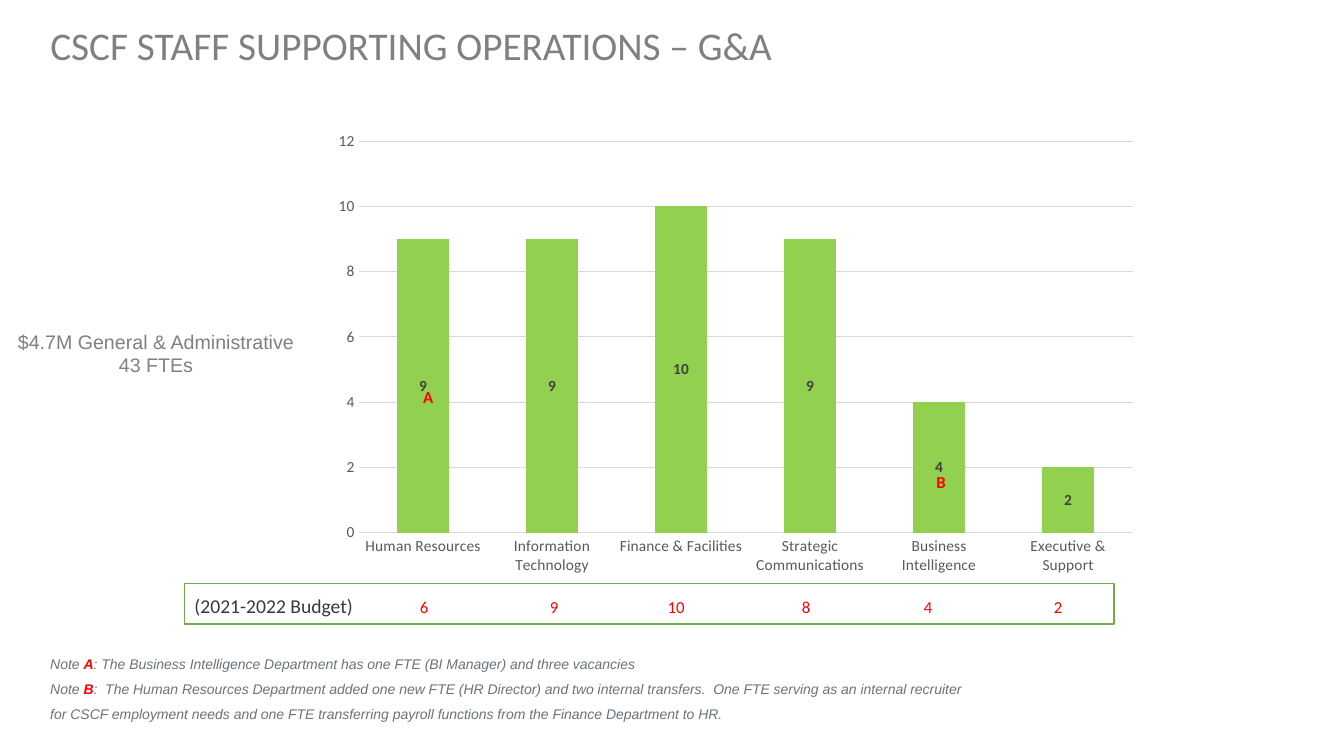
from lxml import etree
from pptx import Presentation
from pptx.chart.data import CategoryChartData
from pptx.dml.color import RGBColor
from pptx.enum.chart import XL_CHART_TYPE, XL_LABEL_POSITION, XL_TICK_MARK
from pptx.enum.shapes import MSO_SHAPE
from pptx.enum.text import MSO_ANCHOR, MSO_AUTO_SIZE, PP_ALIGN
from pptx.oxml import parse_xml
from pptx.oxml.ns import nsdecls, qn
from pptx.util import Pt

COLUMN_STACKED = XL_CHART_TYPE.COLUMN_STACKED
LABEL_CENTER = XL_LABEL_POSITION.CENTER
NO_TICK = XL_TICK_MARK.NONE
RECTANGLE = MSO_SHAPE.RECTANGLE
MIDDLE, TOP = MSO_ANCHOR.MIDDLE, MSO_ANCHOR.TOP
NO_AUTOFIT = MSO_AUTO_SIZE.NONE
LEFT, CENTER = PP_ALIGN.LEFT, PP_ALIGN.CENTER

GRAY, AXIS_GRAY, GRID_GRAY = "808080", "595959", "D9D9D9"
LABEL_GRAY, NOTE_GRAY, BUDGET_GRAY = "404040", "6A737B", "3B3838"
BAR_GREEN, FRAME_GREEN, RED = "92D050", "70AD47", "FF0000"

STAFF = {
    "Human Resources": 9,
    "Information Technology": 9,
    "Finance & Facilities": 10,
    "Strategic Communications": 9,
    "Business Intelligence": 4,
    "Executive & Support": 2,
}
# Budgeted positions, each with its centre measured from the row's text edge
BUDGET = [(6, 164), (9, 257), (10, 344), (8, 437), (4, 524), (2, 617)]
NOTES = [
    ("A", ": The Business Intelligence Department has one FTE (BI Manager) "
          "and three vacancies"),
    ("B", ":  The Human Resources Department added one new FTE (HR Director) "
          "and two internal transfers.  One FTE serving as an internal "
          "recruiter for CSCF employment needs and one FTE transferring "
          "payroll functions from the Finance Department to HR."),
]


def rgb(color):
    return RGBColor.from_string(color)


def set_font(font, size, color, name="Calibri", bold=False, italic=False):
    font.size, font.name = Pt(size), name
    font.bold, font.italic = bold, italic
    font.color.rgb = rgb(color)


def add_run(p, text, size, color, **style):
    r = p.add_run()
    r.text = text
    set_font(r.font, size, color, **style)


def add_text_frame(s, box, wrap=True):
    tf = s.shapes.add_textbox(*map(Pt, box)).text_frame
    tf.word_wrap = wrap
    return tf


def add_title(s, box):
    sp = s.shapes.title
    sp.left, sp.top, sp.width, sp.height = map(Pt, box)
    tf = sp.text_frame
    tf.auto_size, tf.vertical_anchor = NO_AUTOFIT, MIDDLE
    p = tf.paragraphs[0]
    p.alignment, p.line_spacing = LEFT, 0.9
    add_run(p, "CSCF STAFF SUPPORTING OPERATIONS – G&A", 28, GRAY)


def add_summary(s, box):
    tf = add_text_frame(s, box, wrap=False)
    for i, text in enumerate(["$4.7M General & Administrative", "43 FTEs"]):
        p = tf.add_paragraph() if i else tf.paragraphs[0]
        p.alignment = CENTER
        add_run(p, text, 14, GRAY, name="Arial")


def set_plot_area(chart, **fractions):
    """Fix the inner plot area as fractions (x, y, w, h) of the chart."""
    layout = parse_xml(
        f'<c:layout {nsdecls("c")}><c:manualLayout>'
        '<c:layoutTarget val="inner"/><c:xMode val="edge"/>'
        '<c:yMode val="edge"/></c:manualLayout></c:layout>')
    for key, value in fractions.items():
        etree.SubElement(layout[0], qn(f"c:{key}")).set("val", str(value))
    area = chart.plots[0]._element.getparent()
    for old in area.findall(qn("c:layout")):
        area.remove(old)
    area.insert(0, layout)


def add_staff_chart(s, box):
    data = CategoryChartData()
    data.categories = list(STAFF)
    data.add_series("Series 1", list(STAFF.values()))
    chart = s.shapes.add_chart(COLUMN_STACKED, *map(Pt, box), data).chart
    chart.has_legend = chart.has_title = False
    set_font(chart.font, 11, "000000")
    set_plot_area(chart, x=0.04, y=0.04, w=0.94, h=0.85)

    for axis in (chart.category_axis, chart.value_axis):
        axis.major_tick_mark = axis.minor_tick_mark = NO_TICK
        set_font(axis.tick_labels.font, 11, AXIS_GRAY)
    values = chart.value_axis
    values.minimum_scale, values.maximum_scale, values.major_unit = 0, 12, 2
    values.format.line.fill.background()
    for line in (chart.category_axis.format.line,
                 values.major_gridlines.format.line):
        line.color.rgb, line.width = rgb(GRID_GRAY), Pt(0.75)

    plot = chart.plots[0]
    plot.gap_width, plot.overlap, plot.vary_by_categories = 150, 100, False
    fill = plot.series[0].format.fill
    fill.solid()
    fill.fore_color.rgb = rgb(BAR_GREEN)
    plot.has_data_labels = True
    labels = plot.data_labels
    labels.show_value, labels.position = True, LABEL_CENTER
    set_font(labels.font, 11, LABEL_GRAY, bold=True)


def add_note_mark(s, box, letter):
    p = add_text_frame(s, box).paragraphs[0]
    add_run(p, letter, 12, RED, bold=True)


def add_budget_row(s, box):
    sp = s.shapes.add_shape(RECTANGLE, *map(Pt, box))
    sp.shadow.inherit = False
    sp.fill.background()
    sp.line.color.rgb, sp.line.width = rgb(FRAME_GREEN), Pt(1.25)
    tf = sp.text_frame
    tf.word_wrap, tf.vertical_anchor = True, TOP
    p = tf.paragraphs[0]
    p.alignment = LEFT
    tabs = etree.SubElement(p._p.get_or_add_pPr(), qn("a:tabLst"))
    for _, center in BUDGET:
        etree.SubElement(tabs, qn("a:tab"), pos=str(Pt(center)), algn="ctr")
    add_run(p, "(2021-2022 Budget)", 14, BUDGET_GRAY)
    add_run(p, "\t", 18, BUDGET_GRAY)
    add_run(p, "\t".join(str(value) for value, _ in BUDGET), 12, RED)


def add_notes(s, box):
    tf = add_text_frame(s, box)
    for i, (letter, text) in enumerate(NOTES):
        p = tf.add_paragraph() if i else tf.paragraphs[0]
        p.line_spacing = 1.5
        add_run(p, "Note ", 10, NOTE_GRAY, name="Arial", italic=True)
        add_run(p, letter, 10, RED, name="Arial", bold=True, italic=True)
        add_run(p, text, 10, NOTE_GRAY, name="Arial", italic=True)


def add_staff_slide(prs):
    s = prs.slides.add_slide(prs.slide_layouts[5])
    add_summary(s, (5, 232, 213, 41))
    add_staff_chart(s, (232.6, 87.8, 588.2, 329))
    add_title(s, (28.8, 15.8, 900, 37.4))
    add_budget_row(s, (131.8, 416.9, 663.8, 28.8))
    add_notes(s, (28.8, 458.6, 668.2, 59.8))
    add_note_mark(s, (295.2, 272.9, 26, 21.6), "A")
    add_note_mark(s, (661.7, 333.4, 26, 21.6), "B")


def main():
    prs = Presentation()
    prs.slide_width, prs.slide_height = Pt(960), Pt(540)
    add_staff_slide(prs)
    prs.save("out.pptx")


if __name__ == "__main__":
    main()
